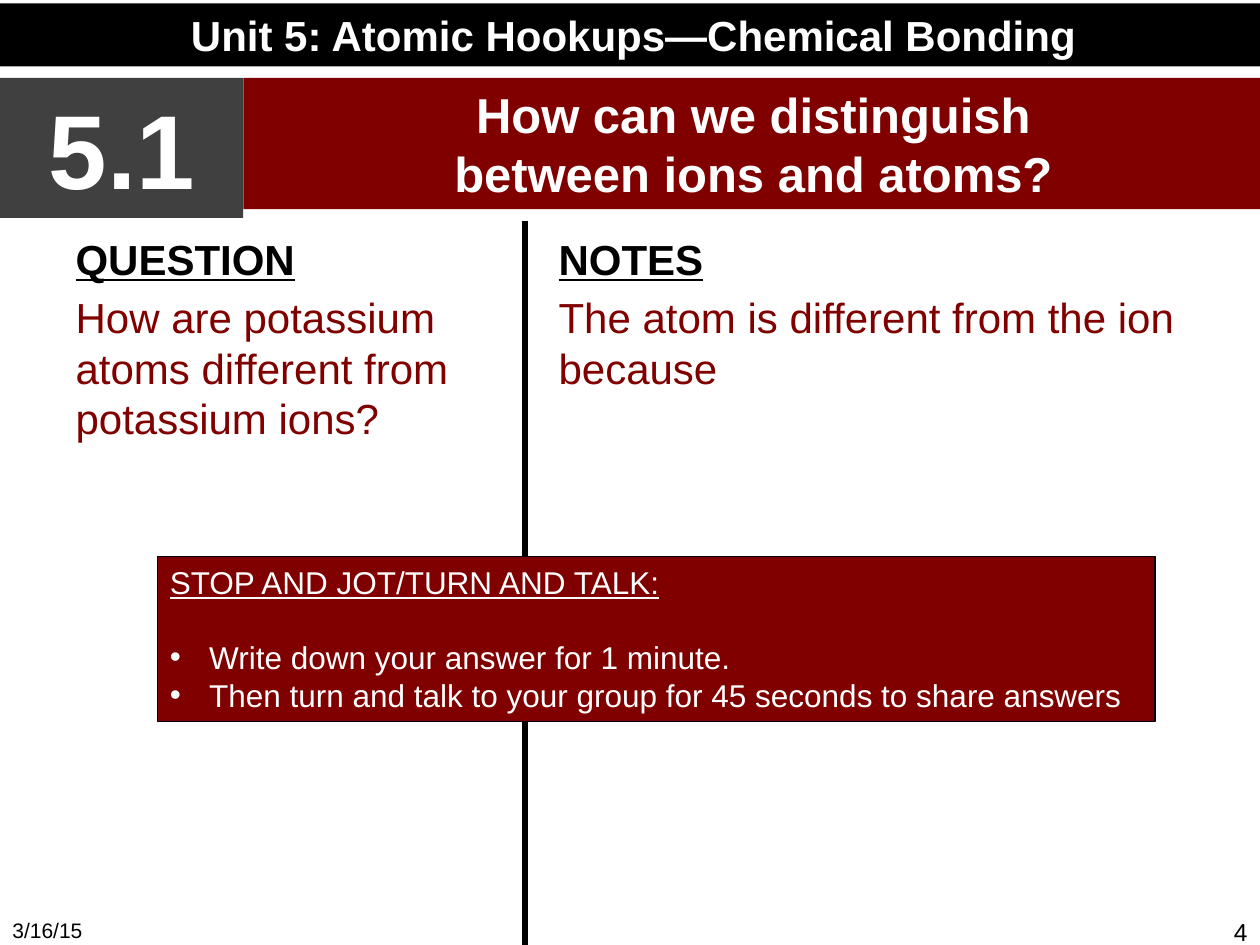
from lxml.etree import SubElement
from pptx import Presentation
from pptx.dml.color import RGBColor
from pptx.enum.shapes import MSO_CONNECTOR, MSO_SHAPE
from pptx.enum.text import MSO_ANCHOR, MSO_AUTO_SIZE, PP_ALIGN
from pptx.oxml.ns import qn
from pptx.util import Pt

# Content
UNIT = "Unit 5: Atomic Hookups—Chemical Bonding"
LESSON = "5.1"
HEADING = ["How can we distinguish", "between ions and atoms?"]
COLUMNS = [
    ("QUESTION", "How are potassium atoms different from potassium ions?"),
    ("NOTES", "The atom is different from the ion because"),
]
TASK_TITLE = "STOP AND JOT/TURN AND TALK:"
TASKS = [
    "Write down your answer for 1 minute.",
    "Then turn and talk to your group for 45 seconds to share answers",
]
DATE, NUMBER = "3/16/15", "4"

THEME = {
    "font": "Arial",
    "black": RGBColor(0, 0, 0),
    "white": RGBColor(255, 255, 255),
    "maroon": RGBColor(0x80, 0, 0),
    "gray": RGBColor(0x40, 0x40, 0x40),
    "lesson": 60, "heading": 28, "body": 24, "task": 18, "number": 14, "date": 12,
}

# Layout in points
WIDTH, HEIGHT = 720, 540
BAND_TOP, LESSON_WIDTH = 44.5, 139
COLUMN_TOP, COLUMN_HEIGHT = 129.6, 356.4
COLUMN_SPANS = [(36, 282), (312, 408)]
DIVIDER_X = 300
FOOTER_TOP, FOOTER_HEIGHT, FOOTER_WIDTH = 520.5, 19.5, 168


def place(shape, left, top, width, height):
    shape.left, shape.top, shape.width, shape.height = map(Pt, (left, top, width, height))


def write(shape, lines, size, color, bold=False, align=PP_ALIGN.LEFT, anchor=MSO_ANCHOR.TOP):
    frame = shape.text_frame
    frame.text = "\n".join(lines)
    frame.word_wrap = True
    frame.auto_size = MSO_AUTO_SIZE.NONE
    frame.vertical_anchor = anchor
    for paragraph in frame.paragraphs:
        paragraph.alignment = align
        for run in paragraph.runs:
            font = run.font
            font.name, font.size, font.bold = THEME["font"], Pt(THEME[size]), bold
            font.color.rgb = THEME[color]
    return frame.paragraphs


def set_bullet(paragraph, character=None, indent=0):
    properties = paragraph._p.get_or_add_pPr()
    properties.set("marL", str(Pt(indent)))
    properties.set("indent", str(-Pt(indent)))
    if character:
        SubElement(properties, qn("a:buFont"), typeface=THEME["font"])
        SubElement(properties, qn("a:buChar"), char=character)
    else:
        SubElement(properties, qn("a:buNone"))


def add_block(slide, bounds, fill, line=None):
    shape = slide.shapes.add_shape(MSO_SHAPE.RECTANGLE, *map(Pt, bounds))
    shape.shadow.inherit = False
    shape.fill.solid()
    shape.fill.fore_color.rgb = THEME[fill]
    if line:
        shape.line.color.rgb = THEME[line]
        shape.line.width = Pt(0.75)
    else:
        shape.line.fill.background()
    return shape


def main():
    presentation = Presentation()
    presentation.slide_width, presentation.slide_height = Pt(WIDTH), Pt(HEIGHT)
    slide = presentation.slides.add_slide(presentation.slide_layouts[3])
    title, *bodies = slide.placeholders
    centered = {"bold": True, "align": PP_ALIGN.CENTER, "anchor": MSO_ANCHOR.MIDDLE}

    # Unit bar, lesson number and heading
    unit_bar = add_block(slide, (0, 2, 724, 36), "black")
    write(unit_bar, [UNIT], "body", "white", **centered)
    lesson_box = add_block(slide, (0, BAND_TOP, LESSON_WIDTH, 80), "gray")
    write(lesson_box, [LESSON], "lesson", "white", **centered)
    place(title, LESSON_WIDTH, BAND_TOP, 583, 75)
    title.fill.solid()
    title.fill.fore_color.rgb = THEME["maroon"]
    write(title, HEADING, "heading", "white", **centered)

    # Question and notes columns
    for body, (left, width), texts in zip(bodies, COLUMN_SPANS, COLUMNS):
        place(body, left, COLUMN_TOP, width, COLUMN_HEIGHT)
        label, text = write(body, texts, "body", "maroon")
        for paragraph in (label, text):
            set_bullet(paragraph)
        label.space_before = Pt(0)
        text.space_before = Pt(4.8)
        font = label.runs[0].font
        font.bold = font.underline = True
        font.color.rgb = THEME["black"]

    # Divider between the columns
    divider = slide.shapes.add_connector(
        MSO_CONNECTOR.STRAIGHT, Pt(DIVIDER_X), Pt(126), Pt(DIVIDER_X), Pt(HEIGHT))
    divider.line.color.rgb = THEME["black"]
    divider.line.width = Pt(3)
    SubElement(divider._element.spPr, qn("a:effectLst"))

    # Task box
    task_box = add_block(slide, (90, 318, 570, 94.5), "maroon", "black")
    task_title, *tasks = write(task_box, [TASK_TITLE, *TASKS], "task", "white")
    task_title.runs[0].font.underline = True
    for paragraph in tasks:
        set_bullet(paragraph, "•", 22.5)
    tasks[0].space_before = Pt(21.5)

    # Date and slide number
    footers = [(DATE, "date", 0, PP_ALIGN.LEFT),
               (NUMBER, "number", WIDTH - FOOTER_WIDTH, PP_ALIGN.RIGHT)]
    for text, size, left, align in footers:
        footer = slide.shapes.add_textbox(
            *map(Pt, (left, FOOTER_TOP, FOOTER_WIDTH, FOOTER_HEIGHT)))
        write(footer, [text], size, "black", align=align)

    presentation.save("out.pptx")


if __name__ == "__main__":
    main()
